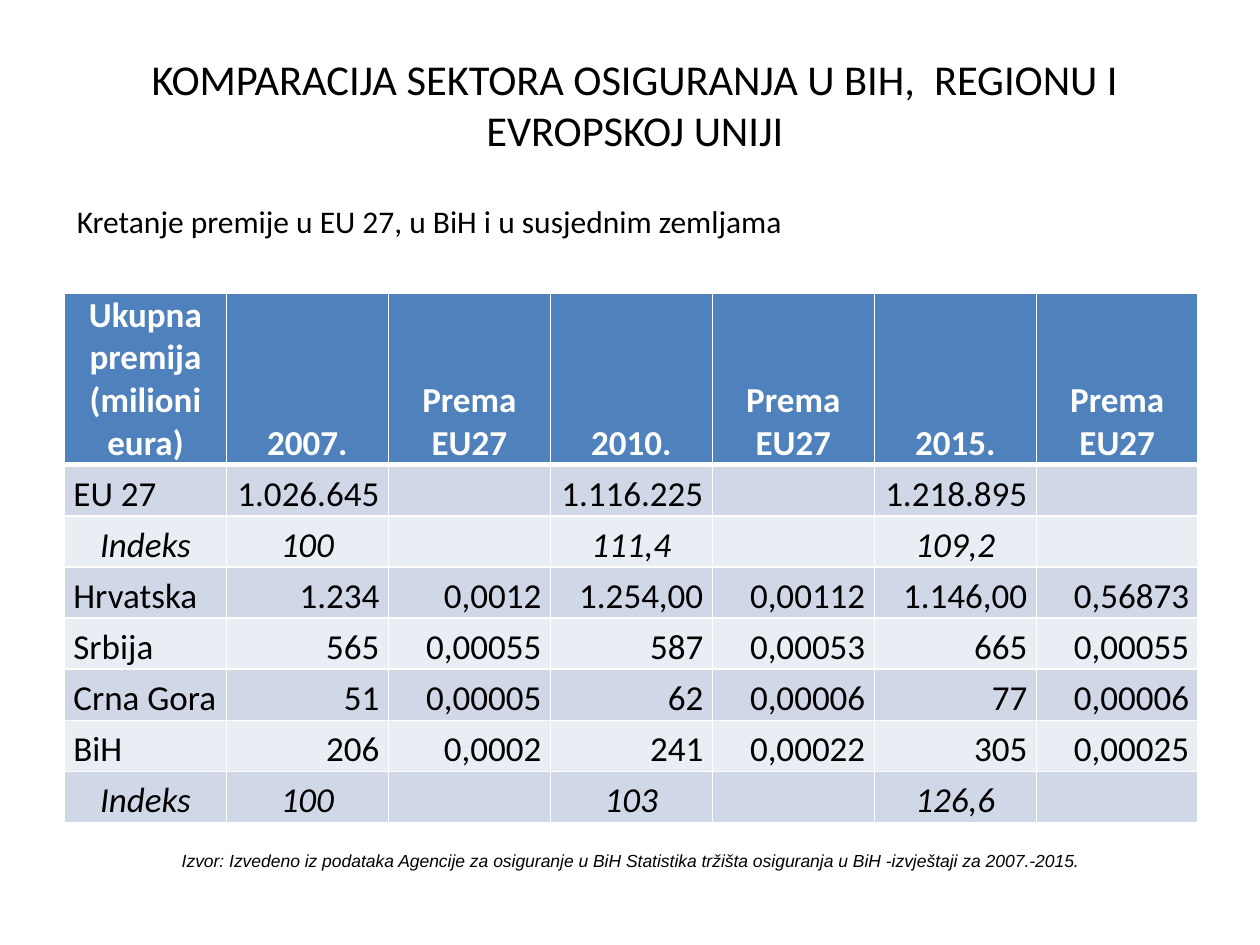
import pptx
import pptx.util
import pptx.dml.color
import pptx.enum.text
import lxml.etree
from pptx.util import Cm

HUES = {"ink": "000000", "white": "FFFFFF", "head": "4F81BD",
        "odd": "D0D8E8", "even": "E9EDF4"}
ALIGN = pptx.enum.text.PP_ALIGN
ANCHOR = pptx.enum.text.MSO_ANCHOR
NS = "http://schemas.openxmlformats.org/drawingml/2006/main"
ROWS = [
    ["Ukupna premija (milioni eura)", "2007.", "Prema EU27", "2010.",
     "Prema EU27", "2015.", "Prema EU27"],
    ["EU 27", "1.026.645", "", "1.116.225", "", "1.218.895", ""],
    ["Indeks", "100", "", "111,4", "", "109,2", ""],
    ["Hrvatska", "1.234", "0,0012", "1.254,00", "0,00112", "1.146,00", "0,56873"],
    ["Srbija", "565", "0,00055", "587", "0,00053", "665", "0,00055"],
    ["Crna Gora", "51", "0,00005", "62", "0,00006", "77", "0,00006"],
    ["BiH", "206", "0,0002", "241", "0,00022", "305", "0,00025"],
    ["Indeks", "100", "", "103", "", "126,6", ""],
]


def color(name):
    """Return the named colour."""
    return pptx.dml.color.RGBColor.from_string(HUES[name])


def write(frame, text, size, align, face="Calibri", hue="ink", bold=False, slant=False):
    """Put one styled paragraph into a text frame."""
    frame.text = text
    para = frame.paragraphs[0]
    para.alignment = align
    for run in para.runs:
        font = run.font
        font.name, font.size = face, pptx.util.Pt(size)
        font.bold, font.italic = bold, slant
        font.color.rgb = color(hue)


def label(slide, box, text, size, align, anchor=ANCHOR.TOP, **style):
    """Add a wrapped text box and return its frame."""
    frame = slide.shapes.add_textbox(*box).text_frame
    frame.word_wrap = True
    frame.vertical_anchor = anchor
    write(frame, text, size, align, **style)
    return frame


def title(slide, box):
    """Place the slide title a little above the middle of its box."""
    frame = label(slide, box, "KOMPARACIJA SEKTORA OSIGURANJA U BIH,  REGIONU I EVROPSKOJ UNIJI",
                  24.3, ALIGN.CENTER, ANCHOR.MIDDLE)
    frame.margin_left = Cm(0.45)
    frame.margin_top, frame.margin_bottom = 0, Cm(0.5)


def border(cell, base):
    """Draw white cell borders with the given bottom width in points."""
    props = cell._tc.get_or_add_tcPr()
    sides = {"lnL": 1, "lnR": 1, "lnT": 1, "lnB": base}
    for spot, (side, width) in enumerate(sides.items()):
        line = lxml.etree.Element(f"{{{NS}}}{side}", w=str(pptx.util.Pt(width)))
        fill = lxml.etree.SubElement(line, f"{{{NS}}}solidFill")
        lxml.etree.SubElement(fill, f"{{{NS}}}srgbClr", val=HUES["white"])
        props.insert(spot, line)


def grid(slide, box):
    """Place the premium table with a tall header and banded rows."""
    left, top, width, height = box
    count = len(ROWS[0])
    table = slide.shapes.add_table(len(ROWS), count, left, top, width, height).table
    for col in table.columns:
        col.width = width // count
    low = Cm(1.03)
    for r, row in enumerate(ROWS):
        head, index = r == 0, row[0] == "Indeks"
        table.rows[r].height = height - low * (len(ROWS) - 1) if head else low
        band = "head" if head else "odd" if r % 2 else "even"
        for c, text in enumerate(row):
            cell = table.cell(r, c)
            cell.fill.solid()
            cell.fill.fore_color.rgb = color(band)
            cell.vertical_anchor = ANCHOR.BOTTOM
            cell.margin_left = cell.margin_right = Cm(0.18)
            cell.margin_top = cell.margin_bottom = 0
            align = ALIGN.CENTER if head or index else ALIGN.RIGHT if c else ALIGN.LEFT
            write(cell.text_frame, text, 20, align, hue="white" if head else "ink",
                  bold=head, slant=index)
            border(cell, 3 if head or r == 1 and False else 1)


def main():
    """Build the slide and save it."""
    deck = pptx.Presentation()
    deck.slide_width, deck.slide_height = Cm(25.4), Cm(19.05)
    slide = deck.slides.add_slide(deck.slide_layouts[6])
    title(slide, (Cm(1.27), Cm(0.76), Cm(22.86), Cm(3.18)))
    grid(slide, (Cm(1.3), Cm(5.92), Cm(22.86), Cm(10.66)))
    label(slide, (0, Cm(16.71), deck.slide_width, Cm(1.27)),
          "Izvor: Izvedeno iz podataka Agencije za osiguranje u BiH Statistika tržišta "
          "osiguranja u BiH -izvještaji za 2007.-2015.",
          10, ALIGN.CENTER, ANCHOR.MIDDLE, face="Arial", slant=True)
    label(slide, (Cm(1.3), Cm(3.94), Cm(22.8), Cm(1.02)),
          "Kretanje premije u EU 27, u BiH i u susjednim zemljama", 18, ALIGN.LEFT)
    deck.save("out.pptx")


if __name__ == "__main__":
    main()
